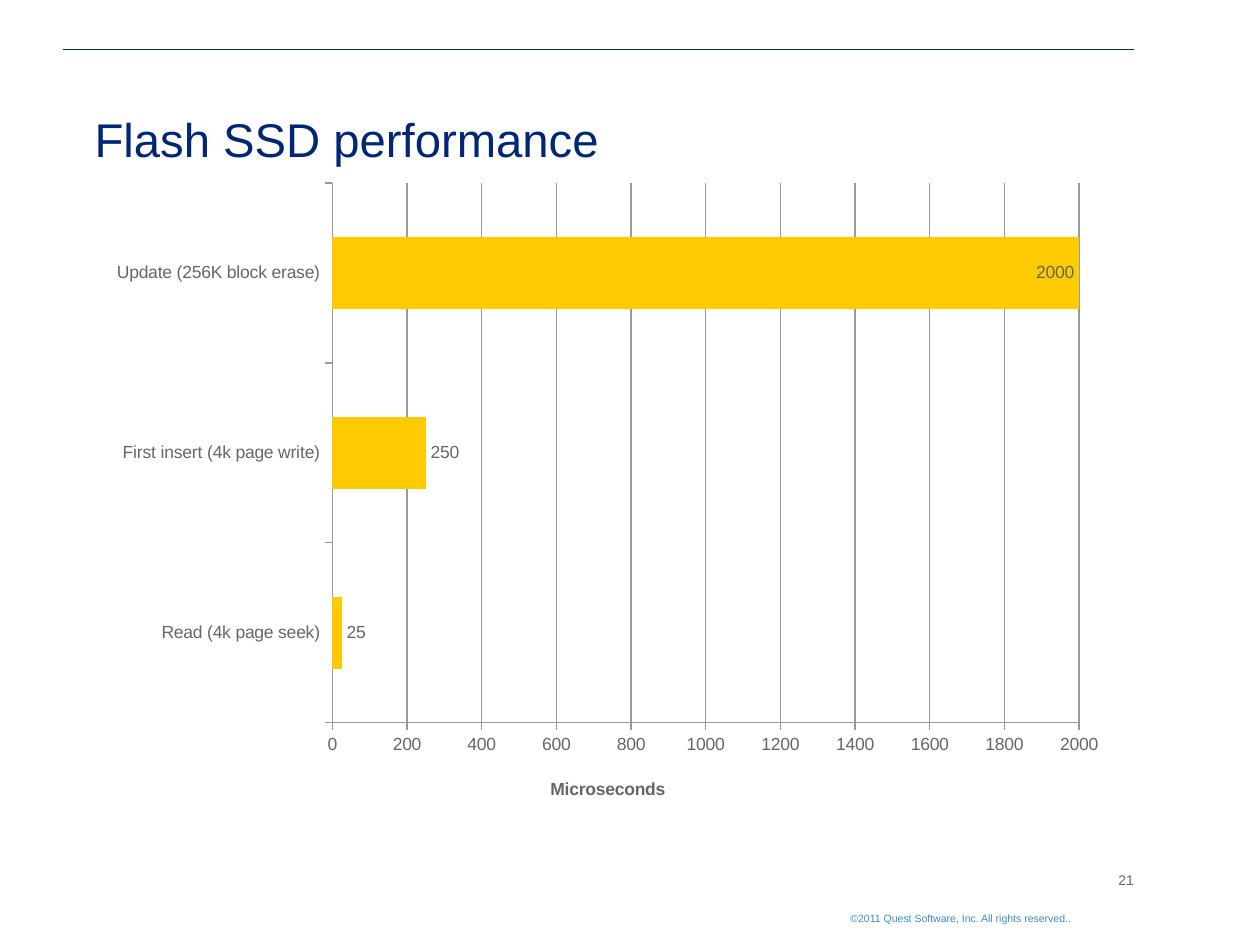
from lxml import etree
from pptx import Presentation
from pptx.chart.data import CategoryChartData
from pptx.dml.color import RGBColor
from pptx.enum.chart import XL_CHART_TYPE, XL_LABEL_POSITION, XL_TICK_MARK
from pptx.enum.shapes import MSO_CONNECTOR
from pptx.enum.text import MSO_ANCHOR, PP_ALIGN
from pptx.oxml.ns import qn
from pptx.util import Inches, Pt

NAVY = RGBColor(0x00, 0x27, 0x76)
GRAY = RGBColor(0x66, 0x66, 0x66)
AXIS_GRAY = RGBColor(0x99, 0x99, 0x99)
BLUE = RGBColor(0x3C, 0x8C, 0xBE)
YELLOW = RGBColor(0xFF, 0xCB, 0x00)


def add_text(frame, text, size, color, alignment):
    paragraph = frame.paragraphs[0]
    paragraph.alignment = alignment
    run = paragraph.add_run()
    run.text = text
    run.font.name = "Arial"
    run.font.size = Pt(size)
    run.font.color.rgb = color


def set_layout(parent, index, **values):
    old_layout = parent.find(qn("c:layout"))
    if old_layout is not None:
        parent.remove(old_layout)
    layout = etree.Element(qn("c:layout"))
    manual = etree.SubElement(layout, qn("c:manualLayout"))
    for tag, value in values.items():
        etree.SubElement(manual, qn(f"c:{tag}")).set("val", str(value))
    parent.insert(index, layout)


presentation = Presentation()
presentation.slide_width = Inches(10)
presentation.slide_height = Inches(7.5)
slide = presentation.slides.add_slide(presentation.slide_layouts[5])

rule = slide.shapes.add_connector(
    MSO_CONNECTOR.STRAIGHT, Inches(0.5), Inches(0.39), Inches(9), Inches(0.39))
rule.line.color.rgb = NAVY
rule.line.width = Pt(0.25)
etree.SubElement(rule._element.spPr, qn("a:effectLst"))

title = slide.shapes.title
title.left, title.top = Inches(0.75), Inches(0.8)
title.width, title.height = Inches(8.51), Inches(0.6)
title.text_frame.margin_left = 0
title.text_frame.word_wrap = False
title.text_frame.vertical_anchor = MSO_ANCHOR.MIDDLE
add_text(title.text_frame, "Flash SSD performance", 27, NAVY, PP_ALIGN.LEFT)

footers = [
    ("21", 8.5, 6.87, 0.5, 0.22, 8, GRAY, 0.04),
    ("©2011 Quest Software, Inc. All rights reserved..", 5.24, 7.24, 3.26, 0.14, 6, BLUE, 0),
]
for text, left, top, width, height, size, color, margin_top in footers:
    box = slide.shapes.add_textbox(Inches(left), Inches(top), Inches(width), Inches(height))
    frame = box.text_frame
    frame.word_wrap = True
    frame.vertical_anchor = MSO_ANCHOR.BOTTOM
    frame.margin_left = frame.margin_right = 0
    frame.margin_top = Inches(margin_top)
    frame.margin_bottom = Inches(0.04)
    add_text(frame, text, size, color, PP_ALIGN.RIGHT)

chart_data = CategoryChartData()
chart_data.categories = [
    "Read (4k page seek)", "First insert (4k page write)", "Update (256K block erase)"]
chart_data.add_series("Series 1", [25, 250, 2000])
chart = slide.shapes.add_chart(
    XL_CHART_TYPE.BAR_CLUSTERED, Inches(0.77), Inches(1.35),
    Inches(8.12), Inches(5.16), chart_data).chart
chart.has_title = False
chart.has_legend = False
chart.font.name = "Arial"
chart.font.size = Pt(10)
chart.font.color.rgb = GRAY

plot = chart.plots[0]
plot.gap_width = 150
plot.vary_by_categories = False
series = plot.series[0]
series.format.fill.solid()
series.format.fill.fore_color.rgb = YELLOW
labels = series.data_labels
labels.show_value = True
labels.position = XL_LABEL_POSITION.OUTSIDE_END
series.points[2].data_label.position = XL_LABEL_POSITION.INSIDE_END

value_axis = chart.value_axis
value_axis.minimum_scale = 0
value_axis.maximum_scale = 2000
value_axis.major_unit = 200
value_axis.has_major_gridlines = True
for axis in (chart.category_axis, value_axis):
    axis.major_tick_mark = XL_TICK_MARK.OUTSIDE
    axis.format.line.color.rgb = AXIS_GRAY
value_axis.major_gridlines.format.line.color.rgb = AXIS_GRAY

axis_title = value_axis.axis_title
run = axis_title.text_frame.paragraphs[0].add_run()
run.text = "Microseconds"
run.font.name = "Arial"
run.font.size = Pt(10)
run.font.bold = True
run.font.color.rgb = GRAY

set_layout(axis_title._element, 1, xMode="edge", yMode="edge", x=0.44, y=0.93)
set_layout(chart._chartSpace.chart.plotArea, 0, layoutTarget="inner",
           xMode="edge", yMode="edge", x=0.23, y=0.02, w=0.73, h=0.83)

presentation.save("out.pptx")
